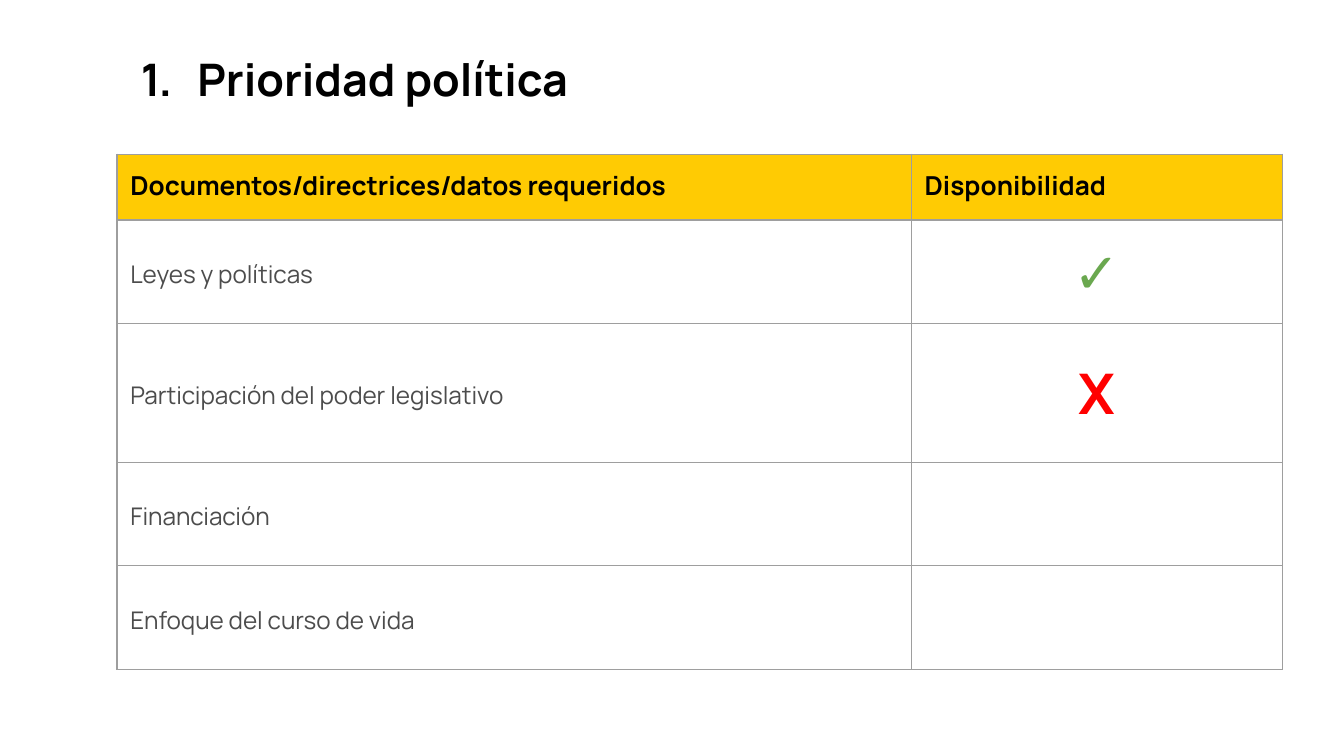
from dataclasses import dataclass
from itertools import product

from lxml.etree import SubElement
from pptx import Presentation
from pptx.dml.color import RGBColor
from pptx.enum.text import MSO_ANCHOR as Anchor, PP_ALIGN as Align
from pptx.oxml.ns import qn
from pptx.util import Inches, Pt

WIDTH = 10
HEIGHT = WIDTH * 9 / 16
BLACK, GRAY, GREEN, RED = "000000", "4C4C4C", "6AA84F", "FF0000"
YELLOW, RULE = "FFCB03", "9E9E9E"


def color(value):
    return RGBColor.from_string(value)


def across(share):
    return Inches(WIDTH * share / 100)


def down(share):
    return Inches(HEIGHT * share / 100)


def add_color(parent, tag, value):
    SubElement(SubElement(parent, qn(tag)), qn("a:srgbClr"), val=value)


def write(para, text, font="Manrope", size=13, tint=GRAY, bold=False, align=Align.LEFT, spacing=None):
    para.alignment = align
    if spacing:
        para.line_spacing = spacing
    span = para.add_run()
    span.text = text
    span.font.name, span.font.size, span.font.bold = font, Pt(size), bold
    span.font.color.rgb = color(tint)


@dataclass
class Page:
    """Places styled elements on a slide, in percent of its width and height."""

    page: object
    font: str = "Manrope"
    inset: float = 0.1
    border: float = 0.75

    def pad(self, target):
        target.margin_left = target.margin_right = Inches(self.inset)
        target.margin_top = target.margin_bottom = Inches(self.inset)

    def title(self, text, left, top, width, height):
        box = self.page.shapes.add_textbox(across(left), down(top), across(width), down(height))
        frame = box.text_frame
        frame.word_wrap = True
        self.pad(frame)
        para = frame.paragraphs[0]
        write(para, text, font=self.font, size=24, tint=BLACK, bold=True)
        self.number(para)

    def number(self, para):
        props = para._p.get_or_add_pPr()
        props.set("marL", str(Inches(0.5)))
        props.set("indent", str(Inches(-0.42)))
        add_color(props, "a:buClr", BLACK)
        SubElement(props, qn("a:buFont"), typeface=self.font)
        SubElement(props, qn("a:buAutoNum"), type="arabicPeriod")

    def outline(self, cell):
        props = cell._tc.get_or_add_tcPr()
        for side in "LRTB":
            line = SubElement(props, qn(f"a:ln{side}"), w=str(Pt(self.border)))
            add_color(line, "a:solidFill", RULE)

    def table(self, rows, left, top, columns, heights):
        frame = self.page.shapes.add_table(
            len(heights), len(columns), across(left), down(top), across(sum(columns)), down(sum(heights))
        )
        table = frame.table
        table.first_row = table.horz_banding = False
        for column, width in zip(table.columns, columns):
            column.width = across(width)
        for row, height in zip(table.rows, heights):
            row.height = down(height)
        for r, c in product(range(len(heights)), range(len(columns))):
            self.cell(table.cell(r, c), rows[r][c], header=r == 0)

    def cell(self, cell, content, header):
        self.outline(cell)
        self.pad(cell)
        cell.vertical_anchor = Anchor.TOP if header else Anchor.MIDDLE
        if header:
            cell.fill.solid()
            cell.fill.fore_color.rgb = color(YELLOW)
        else:
            cell.fill.background()
        if content:
            text, style = content
            write(cell.text_frame.paragraphs[0], text, font=self.font, **style)


def main():
    deck = Presentation()
    deck.slide_width, deck.slide_height = Inches(WIDTH), Inches(HEIGHT)
    page = Page(deck.slides.add_slide(deck.slide_layouts[6]))

    heading = dict(size=14, tint=BLACK, bold=True)
    label = dict(spacing=1.15)
    mark = dict(size=30, bold=True, align=Align.CENTER)
    rows = [
        [("Documentos/directrices/datos requeridos", heading), ("Disponibilidad", heading)],
        [("Leyes y políticas", label), ("✓", dict(mark, tint=GREEN))],
        [("Participación del poder legislativo", label), ("X", dict(mark, tint=RED))],
        [("Financiación", label), None],
        [("Enfoque del curso de vida", label), None],
    ]
    page.title("Prioridad política", left=8.7, top=5.05, width=76.1, height=10.5)
    page.table(rows, left=8.7, top=20.4, columns=[59.1, 27.6], heights=[8.7, 13.7, 18.35, 13.7, 13.7])
    deck.save("out.pptx")


if __name__ == "__main__":
    main()
